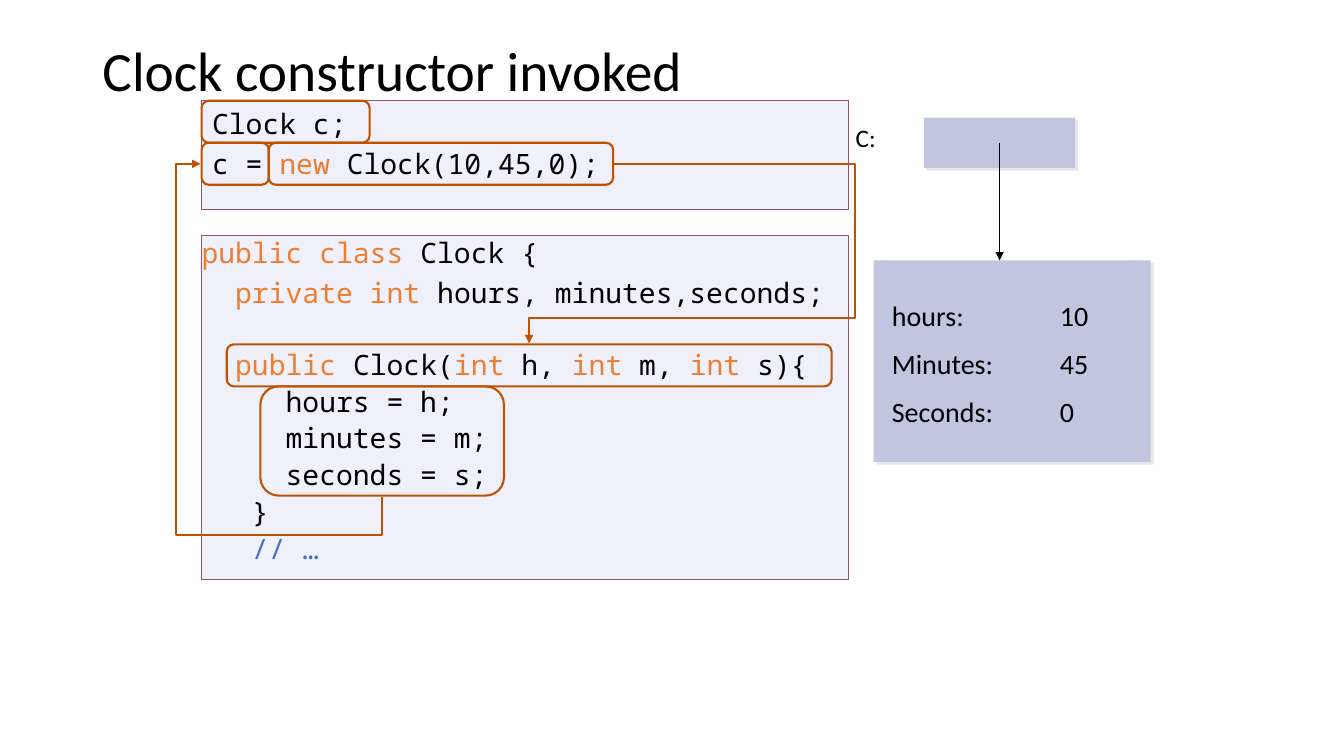
from pptx import Presentation
from pptx.dml.color import RGBColor
from pptx.enum.shapes import MSO_CONNECTOR, MSO_SHAPE
from pptx.enum.text import MSO_ANCHOR, MSO_AUTO_SIZE, PP_ALIGN
from pptx.oxml.ns import qn
from pptx.util import Pt
from lxml import etree

PX = 9525
RECT, ROUNDED = MSO_SHAPE.RECTANGLE, MSO_SHAPE.ROUNDED_RECTANGLE
STRAIGHT, ELBOW = MSO_CONNECTOR.STRAIGHT, MSO_CONNECTOR.ELBOW
TOP, MIDDLE, LEFT = MSO_ANCHOR.TOP, MSO_ANCHOR.MIDDLE, PP_ALIGN.LEFT
NO_FIT, GROW = MSO_AUTO_SIZE.NONE, MSO_AUTO_SIZE.SHAPE_TO_FIT_TEXT

BLACK = RGBColor(0x00, 0x00, 0x00)
KEYWORD = RGBColor(0xED, 0x7D, 0x31)
COMMENT = RGBColor(0x44, 0x72, 0xC4)
PANEL = RGBColor(0xF0, 0xF0, 0xFA)
PANEL_EDGE = RGBColor(0x95, 0x4F, 0x72)
MEMORY = RGBColor(0xC0, 0xC6, 0xE0)
MARK = RGBColor(0xBD, 0x52, 0x01)
SHADOW = RGBColor(0xE7, 0xE6, 0xE6)

CALL_CODE = [
    [("Clock c;", BLACK)],
    [("c =", BLACK), (" new ", KEYWORD), ("Clock(10,45,0);", BLACK)],
]
CLASS_CODE = [
    [("public class", KEYWORD), (" Clock {", BLACK)],
    [("  private int", KEYWORD), (" hours, minutes,seconds;", BLACK)],
    [("  public", KEYWORD), (" Clock(", BLACK), ("int", KEYWORD), (" h, ", BLACK),
     ("int", KEYWORD), (" m, ", BLACK), ("int", KEYWORD), (" s){", BLACK)],
    [("     hours = h;", BLACK)],
    [("     minutes = m;", BLACK)],
    [("     seconds = s;", BLACK)],
    [("   }", BLACK)],
    [("   // …", COMMENT)],
]
CONSTRUCTOR = 2


class ClockPage:
    """Draws the elements of the constructor slide in one style."""

    text_font = "Calibri"
    code_font = "Noto Sans Mono"

    def __init__(self, deck):
        self.page = deck.slides.add_slide(deck.slide_layouts[5])

    def style(self, span, font, size, color):
        span.font.name, span.font.size = font, Pt(size)
        span.font.color.rgb = color

    def title(self, text, left, top, width, height):
        box = self.page.shapes.title
        box.left, box.top, box.width, box.height = (v * PX for v in (left, top, width, height))
        frame = box.text_frame
        frame.text = text
        frame.auto_size, frame.vertical_anchor = NO_FIT, MIDDLE
        para = frame.paragraphs[0]
        para.alignment, para.line_spacing = LEFT, 0.9
        self.style(para.runs[0], self.text_font, 39.6, BLACK)

    def shape(self, kind, bounds, fill=None, edge=None, weight=1.5):
        box = self.page.shapes.add_shape(kind, *(v * PX for v in bounds))
        box.shadow.inherit = False
        if fill is None:
            box.fill.background()
        else:
            box.fill.solid()
            box.fill.fore_color.rgb = fill
        if edge is None:
            box.line.fill.background()
        else:
            box.line.color.rgb, box.line.width = edge, Pt(weight)
        return box

    def code(self, bounds, lines, inset=(0, 0), tight_from=99):
        box = self.shape(RECT, bounds, PANEL, PANEL_EDGE, 0.75)
        frame = box.text_frame
        frame.word_wrap, frame.vertical_anchor = True, TOP
        frame.margin_left, frame.margin_top = (v * PX for v in inset)
        for index, line in enumerate(lines):
            para = frame.add_paragraph() if index else frame.paragraphs[0]
            para.alignment = LEFT
            if index:
                para.space_before = Pt(30 if index == tight_from else 4.7)
            if index >= tight_from:
                para.line_spacing = 0.9
            for text, color in line:
                span = para.add_run()
                span.text = text
                self.style(span, self.code_font, 20, color)

    def memory(self, bounds):
        box = self.shape(RECT, bounds, MEMORY)
        effects = box.element.spPr.find(qn("a:effectLst"))
        shadow = etree.SubElement(effects, qn("a:outerShdw"), dist=str(Pt(2.8)),
                                  dir="2700000", algn="ctr", rotWithShape="0")
        etree.SubElement(shadow, qn("a:srgbClr"), val=str(SHADOW))

    def label(self, bounds, text, size=20):
        box = self.page.shapes.add_textbox(*(v * PX for v in bounds))
        frame = box.text_frame
        frame.word_wrap, frame.auto_size = True, GROW
        frame.text = text
        for index, para in enumerate(frame.paragraphs):
            if index:
                para.space_before = Pt(size / 2)
            self.style(para.runs[0], self.text_font, size, BLACK)

    def mark(self, bounds):
        self.shape(ROUNDED, bounds, edge=MARK).adjustments[0] = 0.167

    def arrow(self, kind, start, end, color, weight, tip="a:tailEnd"):
        line = self.page.shapes.add_connector(kind, *(v * PX for v in start + end))
        line.line.color.rgb, line.line.width = color, Pt(weight)
        etree.SubElement(line.line.get_or_add_ln() if hasattr(line.line, "get_or_add_ln")
                         else line.element.spPr.find(qn("a:ln")), qn(tip), type="triangle")
        etree.SubElement(line.element.spPr, qn("a:effectLst"))
        return line

    def bent_arrow(self, start, turn, end, tip):
        line = self.arrow(ELBOW, start, end, MARK, 1.5, tip)
        geometry = line.element.spPr.find(qn("a:prstGeom"))
        geometry.set("prst", "bentConnector4")
        guides = geometry.find(qn("a:avLst"))
        for index, (first, middle, last) in enumerate(zip(start, turn, end), 1):
            ratio = round(100000 * (middle - first) / (last - first))
            etree.SubElement(guides, qn("a:gd"), name=f"adj{index}", fmla=f"val {ratio}")


def main():
    deck = Presentation()
    deck.slide_width, deck.slide_height = 1280 * PX, 720 * PX
    clock = ClockPage(deck)
    clock.title("Clock constructor invoked", 88, 38, 1104, 65)
    clock.code((192, 224, 616, 328), CLASS_CODE, tight_from=CONSTRUCTOR)
    clock.memory((880, 112, 144, 48))
    clock.label((800, 112, 72, 38), " C:", 18)
    clock.memory((832, 248, 264, 192))
    clock.label((1000, 280, 64, 137), "10\n45\n0")
    clock.arrow(STRAIGHT, (952, 136), (952, 248), BLACK, 1)
    clock.code((192, 96, 616, 104), CALL_CODE, inset=(10, 5))
    for bounds in ((192, 96, 160, 40), (256, 136, 328, 40),
                   (248, 368, 232, 104), (216, 328, 576, 40)):
        clock.mark(bounds)
    clock.bent_arrow((585, 156), (814, 303), (504, 327), "a:tailEnd")
    clock.bent_arrow((191, 156), (168, 509), (364, 473), "a:headEnd")
    clock.mark((192, 136, 64, 40))
    clock.label((840, 280, 144, 137), "hours:\nMinutes:\nSeconds:")
    deck.save("out.pptx")


if __name__ == "__main__":
    main()
